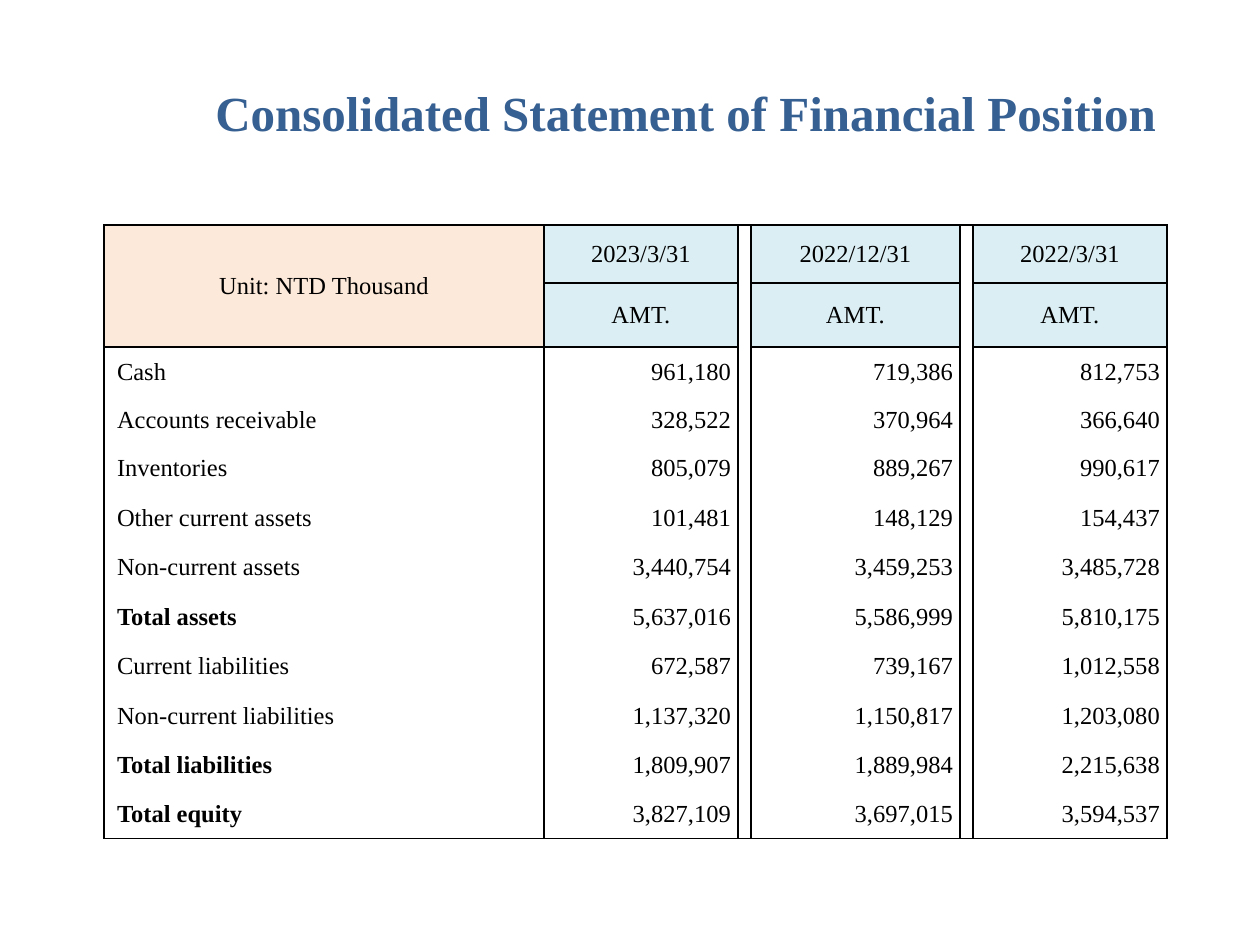
from dataclasses import dataclass

from lxml.etree import SubElement
from pptx import Presentation
from pptx.dml.color import RGBColor
from pptx.enum.text import MSO_ANCHOR as Anchor, PP_ALIGN as Align
from pptx.oxml.ns import qn
from pptx.util import Emu, Pt

FONT = "Times New Roman"
BLACK, BLUE, PEACH, AQUA = "000000", "376092", "FDE9D9", "DBEEF3"
WIDTHS = [440, 194, 13, 209, 13, 194]
HEIGHTS = [58, 64, 49, 47] + [50, 49] * 4
GAPS = (2, 4)
DATA = (1, 3, 5)
DATES = ("2023/3/31", "2022/12/31", "2022/3/31")


@dataclass
class Item:
    label: str
    sums: tuple[int, int, int]
    bold: bool = False


ITEMS = [
    Item("Cash", (961180, 719386, 812753)),
    Item("Accounts receivable", (328522, 370964, 366640)),
    Item("Inventories", (805079, 889267, 990617)),
    Item("Other current assets", (101481, 148129, 154437)),
    Item("Non-current assets", (3440754, 3459253, 3485728)),
    Item("Total assets", (5637016, 5586999, 5810175), True),
    Item("Current liabilities", (672587, 739167, 1012558)),
    Item("Non-current liabilities", (1137320, 1150817, 1203080)),
    Item("Total liabilities", (1809907, 1889984, 2215638), True),
    Item("Total equity", (3827109, 3697015, 3594537), True),
]


def px(n: int) -> Emu:
    return Emu(round(n * 914400 / 126))


def rgb(code: str) -> RGBColor:
    return RGBColor.from_string(code)


def write(frame, text: str, size: int = 14, color: str = BLACK,
          bold: bool = False, align=Align.LEFT) -> None:
    para = frame.paragraphs[0]
    para.alignment = align
    run = para.add_run()
    run.text = text
    run.font.name = FONT
    run.font.size = Pt(size)
    run.font.bold = bold
    run.font.color.rgb = rgb(color)


def border(cell, sides: str) -> None:
    """Rule the sides named by the letters L, R, T and B; clear the others."""
    props = cell._tc.get_or_add_tcPr()
    for side in "LRTB":
        line = SubElement(props, qn(f"a:ln{side}"), w=str(Pt(1)))
        if side in sides:
            fill = SubElement(line, qn("a:solidFill"))
            SubElement(fill, qn("a:srgbClr"), val=BLACK)
        else:
            SubElement(line, qn("a:noFill"))


def style(cell, row: int, col: int) -> None:
    last = len(HEIGHTS) - 1
    ruled = col not in GAPS
    sides = "LR"
    if row == 0 or (row <= 2 and ruled):
        sides += "T"
    if row == last or (row <= 1 and ruled):
        sides += "B"
    border(cell, sides)
    if row < 2 and ruled:
        cell.fill.solid()
        cell.fill.fore_color.rgb = rgb(AQUA if col else PEACH)
    else:
        cell.fill.background()
    body = row >= 2
    cell.vertical_anchor = Anchor.MIDDLE
    cell.margin_left = px(13 if body and col == 0 else 1)
    cell.margin_right = px(7 if body and col in DATA else 1)
    cell.margin_top = px(1)
    cell.margin_bottom = px(0)


def draw_table(slide) -> None:
    table = slide.shapes.add_table(
        len(HEIGHTS), len(WIDTHS), px(104), px(225),
        px(sum(WIDTHS)), px(sum(HEIGHTS))).table
    table.first_row = table.horz_banding = False
    for col, width in zip(table.columns, WIDTHS):
        col.width = px(width)
    for row, height in zip(table.rows, HEIGHTS):
        row.height = px(height)
    for r in range(len(HEIGHTS)):
        for c in range(len(WIDTHS)):
            style(table.cell(r, c), r, c)

    unit = table.cell(0, 0)
    unit.merge(table.cell(1, 0))
    write(unit.text_frame, "Unit: NTD Thousand", align=Align.CENTER)
    for c, date in zip(DATA, DATES):
        for r, text in enumerate((date, "AMT.")):
            write(table.cell(r, c).text_frame, text, align=Align.CENTER)
    for r, item in enumerate(ITEMS, 2):
        write(table.cell(r, 0).text_frame, item.label, bold=item.bold)
        for c, value in zip(DATA, item.sums):
            write(table.cell(r, c).text_frame, f"{value:,}", align=Align.RIGHT)


def main() -> None:
    deck = Presentation()
    deck.slide_width, deck.slide_height = px(1260), px(945)
    slide = deck.slides.add_slide(deck.slide_layouts[6])
    title = slide.shapes.add_textbox(px(203), px(76), px(992), px(158)).text_frame
    title.word_wrap = True
    write(title, "Consolidated Statement of Financial Position",
          size=28, color=BLUE, bold=True)
    draw_table(slide)
    deck.save("out.pptx")


if __name__ == "__main__":
    main()
